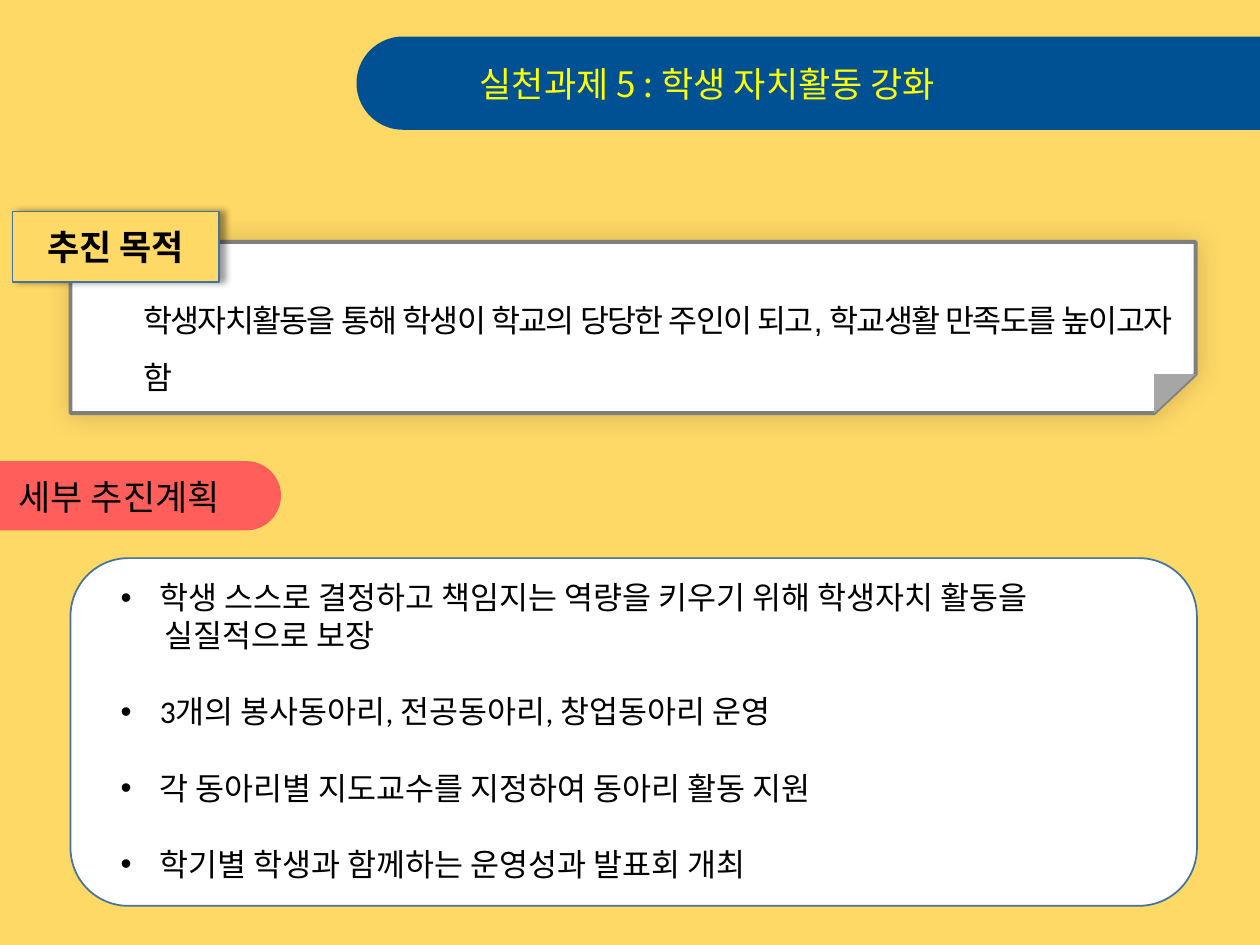
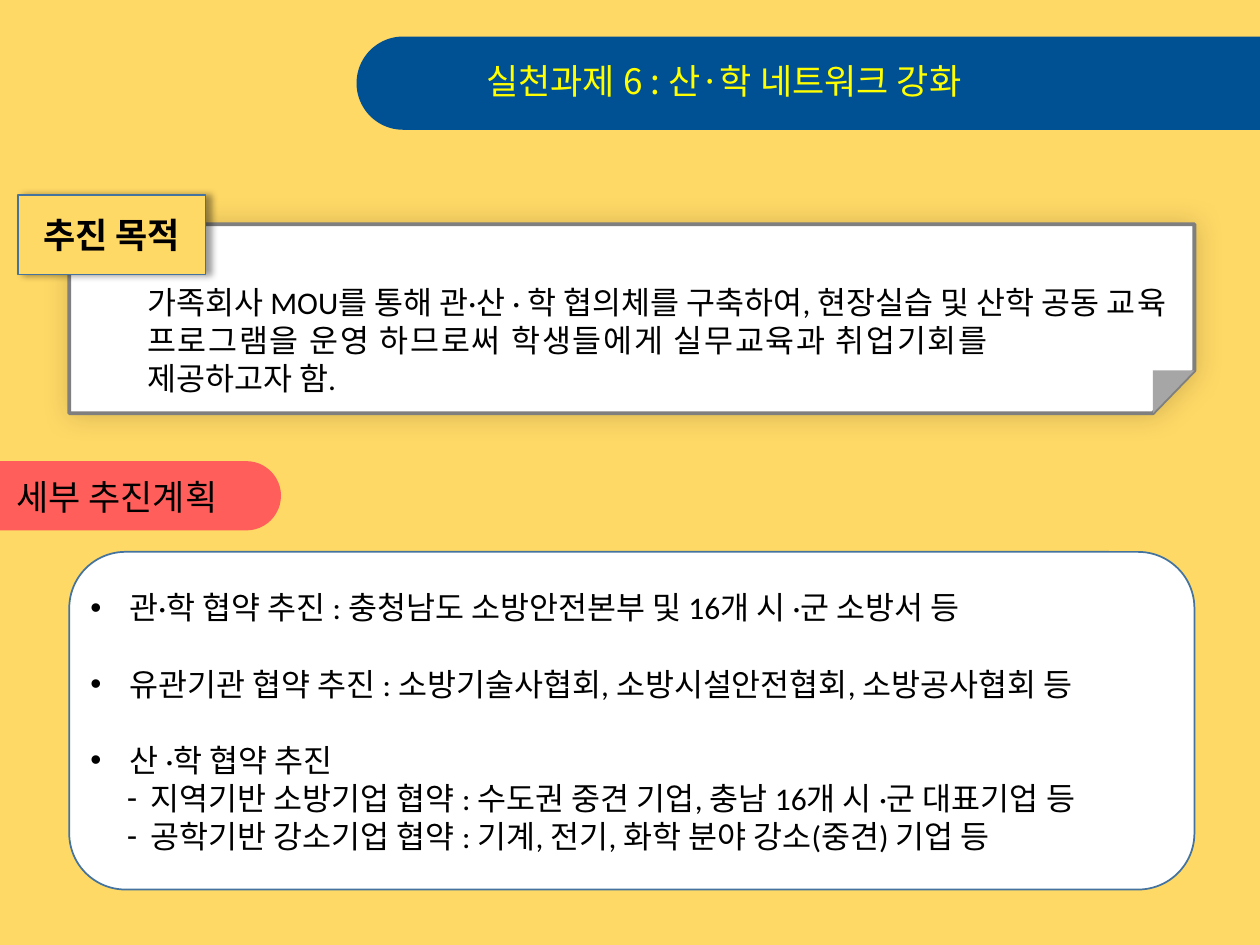
from lxml import etree
from pptx import Presentation
from pptx.dml.color import RGBColor
from pptx.enum.shapes import MSO_SHAPE
from pptx.enum.text import MSO_ANCHOR, MSO_AUTO_SIZE, PP_ALIGN
from pptx.oxml.ns import qn
from pptx.util import Inches, Pt

RECT = MSO_SHAPE.RECTANGLE
ROUNDED = MSO_SHAPE.ROUNDED_RECTANGLE
TAB = MSO_SHAPE.ROUND_2_SAME_RECTANGLE
FOLD = MSO_SHAPE.RIGHT_TRIANGLE
TOP, MIDDLE = MSO_ANCHOR.TOP, MSO_ANCHOR.MIDDLE
LEFT, CENTER = PP_ALIGN.LEFT, PP_ALIGN.CENTER
NO_AUTOFIT = MSO_AUTO_SIZE.NONE

SAND = RGBColor(0xFF, 0xD9, 0x66)
NAVY = RGBColor(0x00, 0x50, 0x94)
CORAL = RGBColor(0xFF, 0x5E, 0x5A)
STEEL = RGBColor(0x43, 0x73, 0x9E)
YELLOW = RGBColor(0xFF, 0xFF, 0x00)
WHITE = RGBColor(0xFF, 0xFF, 0xFF)
BLACK = RGBColor(0x00, 0x00, 0x00)
GRAY = RGBColor(0x7F, 0x7F, 0x7F)
LIGHT_GRAY = RGBColor(0xA6, 0xA6, 0xA6)

HEAD_FONT = "Noto Sans CJK KR"
BODY_FONT = "Calibri"
TITLE_LAYOUT = 5
BLANK_LINE = 22

# Left indent and first-line offset in inches, by bullet character
INDENTS = {"•": (0.31, -0.31), "-": (0.48, -0.19), "": (0.35, 0)}


def paint(shape, fill, line=None, line_width=1):
    shape.shadow.inherit = False
    shape.fill.solid()
    shape.fill.fore_color.rgb = fill
    if line is None:
        shape.line.fill.background()
    else:
        shape.line.color.rgb = line
        shape.line.width = Pt(line_width)


def cast_shadow(shape, opacity, blur, distance):
    effects = shape._element.spPr.find(qn("a:effectLst"))
    shadow = etree.SubElement(effects, qn("a:outerShdw"), blurRad=str(Pt(blur)),
                              dist=str(Pt(distance)), dir="0", algn="ctr", rotWithShape="0")
    color = etree.SubElement(shadow, qn("a:srgbClr"), val=str(BLACK))
    etree.SubElement(color, qn("a:alpha"), val=str(opacity * 1000))


def add_box(slide, kind, box, fill, line=None):
    shape = slide.shapes.add_shape(kind, *map(Inches, box))
    paint(shape, fill, line)
    return shape


def add_side_tab(slide, box, fill, rotation):
    """Bar whose rounded end points left (270) or right (90); box is as seen."""
    x, y, w, h = box
    turned = (x + (w - h) / 2, y + (h - w) / 2, h, w)
    tab = add_box(slide, TAB, turned, fill)
    tab.adjustments[0] = 0.5
    tab.rotation = rotation


def add_run(paragraph, text, size, color=BLACK, font=BODY_FONT, bold=False, spacing=0):
    run = paragraph.add_run()
    run.text = text
    run.font.size = Pt(size)
    run.font.bold = bold
    run.font.color.rgb = color
    run.font.name = font
    properties = run.font._element
    etree.SubElement(properties, qn("a:ea"), typeface=font)
    if spacing:
        properties.set("spc", str(spacing * 100))


def prepare_frame(shape, anchor):
    frame = shape.text_frame
    frame.auto_size = NO_AUTOFIT
    frame.word_wrap = True
    frame.vertical_anchor = anchor
    return frame


def add_frame(slide, box, anchor=TOP):
    return prepare_frame(slide.shapes.add_textbox(*map(Inches, box)), anchor)


def next_paragraph(frame, index):
    return frame.add_paragraph() if index else frame.paragraphs[0]


def add_heading(slide, text, box):
    add_side_tab(slide, (2.83, 0.29, 7.17, 0.74), NAVY, 270)
    title = slide.shapes.title
    slide.shapes._spTree.append(title._element)
    title.left, title.top, title.width, title.height = map(Inches, box)
    paragraph = prepare_frame(title, MIDDLE).paragraphs[0]
    paragraph.alignment = CENTER
    add_run(paragraph, text, 20, YELLOW, HEAD_FONT)


def add_folded_note(slide, box, fold_height):
    x, y, w, h = box
    right, bottom, fold_width = x + w, y + h, 0.33
    corners = [(right, y), (right, bottom - fold_height), (right - fold_width, bottom), (x, bottom)]
    outline = slide.shapes.build_freeform(Inches(x), Inches(y))
    outline.add_line_segments([(Inches(px), Inches(py)) for px, py in corners], close=True)
    note = outline.convert_to_shape()
    paint(note, WHITE, GRAY, 2.25)
    cast_shadow(note, 17, 15, 0)
    fold = add_box(slide, FOLD, (right - fold_width, bottom - fold_height, fold_width, fold_height),
                   LIGHT_GRAY)
    fold._element.spPr.find(qn("a:xfrm")).set("flipV", "1")


def add_purpose(slide, note_box, fold_height, tag_box, text_box, paragraphs, font, line_spacing):
    add_folded_note(slide, note_box, fold_height)
    frame = add_frame(slide, text_box)
    for index, runs in enumerate(paragraphs):
        paragraph = next_paragraph(frame, index)
        paragraph.line_spacing = line_spacing
        for text, spacing in runs:
            add_run(paragraph, text, 18, font=font, spacing=spacing)
    tag = add_box(slide, RECT, tag_box, SAND, STEEL)
    cast_shadow(tag, 40, 4, 3)
    label = prepare_frame(tag, MIDDLE).paragraphs[0]
    label.alignment = CENTER
    add_run(label, "추진 목적", 20, font=HEAD_FONT, bold=True)


def add_plan_label(slide, text_left):
    add_side_tab(slide, (0, 3.66, 2.23, 0.55), CORAL, 90)
    label = add_frame(slide, (text_left, 3.72, 1.97, 0.44), MIDDLE).paragraphs[0]
    add_run(label, "세부 추진계획", 20, font=HEAD_FONT)


def add_plan(slide, panel_box, text_box, items):
    add_box(slide, ROUNDED, panel_box, WHITE, STEEL)
    frame = add_frame(slide, text_box)
    for index, (bullet, text) in enumerate(items):
        paragraph = next_paragraph(frame, index)
        paragraph.alignment = LEFT
        left, first = INDENTS[bullet]
        properties = paragraph._p.get_or_add_pPr()
        properties.set("marL", str(Inches(left)))
        properties.set("indent", str(Inches(first)))
        if bullet:
            etree.SubElement(properties, qn("a:buFont"), typeface="Arial")
            etree.SubElement(properties, qn("a:buChar"), char=bullet)
        if index and bullet == "•":
            paragraph.space_before = Pt(BLANK_LINE)
        add_run(paragraph, text, 18)


TASKS = [
    dict(
        heading=dict(text="실천과제 5 : 학생 자치활동 강화", box=(2.27, 0.44, 6.69, 0.44)),
        purpose=dict(
            note_box=(0.56, 1.92, 8.93, 1.36), fold_height=0.31,
            tag_box=(0.1, 1.68, 1.64, 0.56), text_box=(1.04, 2.19, 8.47, 0.95),
            font="Arial", line_spacing=1.5,
            paragraphs=[[("학생자치활동을 통해 학생이 학교의 당당한 주인이 되고, "
                          "학교생활 만족도를 높이고자 함", -1)]]),
        label_left=0.05,
        plan=dict(
            panel_box=(0.56, 4.43, 8.94, 2.76), text_box=(0.86, 4.54, 8.65, 2.52),
            items=[
                ("•", "학생 스스로 결정하고 책임지는 역량을 키우기 위해 학생자치 활동을"),
                ("", "실질적으로 보장"),
                ("•", "3개의 봉사동아리, 전공동아리, 창업동아리 운영"),
                ("•", "각 동아리별 지도교수를 지정하여 동아리 활동 지원"),
                ("•", "학기별 학생과 함께하는 운영성과 발표회 개최"),
            ]),
    ),
    dict(
        heading=dict(text="실천과제 6 : 산·학 네트워크 강화", box=(2.4, 0.42, 6.69, 0.44)),
        purpose=dict(
            note_box=(0.55, 1.78, 8.93, 1.5), fold_height=0.34,
            tag_box=(0.14, 1.55, 1.49, 0.63), text_box=(1.07, 2.2, 8.31, 1.01),
            font=BODY_FONT, line_spacing=1.0,
            paragraphs=[
                [("가족회사 MOU를 통해 관·산 · 학 협의체를 구축하여, 현장실습 및 산학 공동 ", 0),
                 ("교육 프로그램을 운영 하므로써 학생들에게 실무교육과 취업기회를", 1)],
                [("제공하고자 함.", 0)],
            ]),
        label_left=0.03,
        plan=dict(
            panel_box=(0.55, 4.38, 8.93, 2.68), text_box=(0.62, 4.62, 8.86, 2.22),
            items=[
                ("•", "관·학 협약 추진 : 충청남도 소방안전본부 및 16개 시 ·군 소방서 등"),
                ("•", "유관기관 협약 추진 : 소방기술사협회, 소방시설안전협회, 소방공사협회 등"),
                ("•", "산 ·학 협약 추진"),
                ("-", "지역기반 소방기업 협약 : 수도권 중견 기업, 충남 16개 시 ·군 대표기업 등"),
                ("-", "공학기반 강소기업 협약 : 기계, 전기, 화학 분야 강소(중견) 기업 등"),
            ]),
    ),
]


def add_task_slide(deck, task):
    slide = deck.slides.add_slide(deck.slide_layouts[TITLE_LAYOUT])
    slide.background.fill.solid()
    slide.background.fill.fore_color.rgb = SAND
    add_heading(slide, **task["heading"])
    add_purpose(slide, **task["purpose"])
    add_plan_label(slide, task["label_left"])
    add_plan(slide, **task["plan"])


def main():
    deck = Presentation()
    deck.slide_width, deck.slide_height = Inches(10), Inches(7.5)
    for task in TASKS:
        add_task_slide(deck, task)
    deck.save("out.pptx")


if __name__ == "__main__":
    main()
